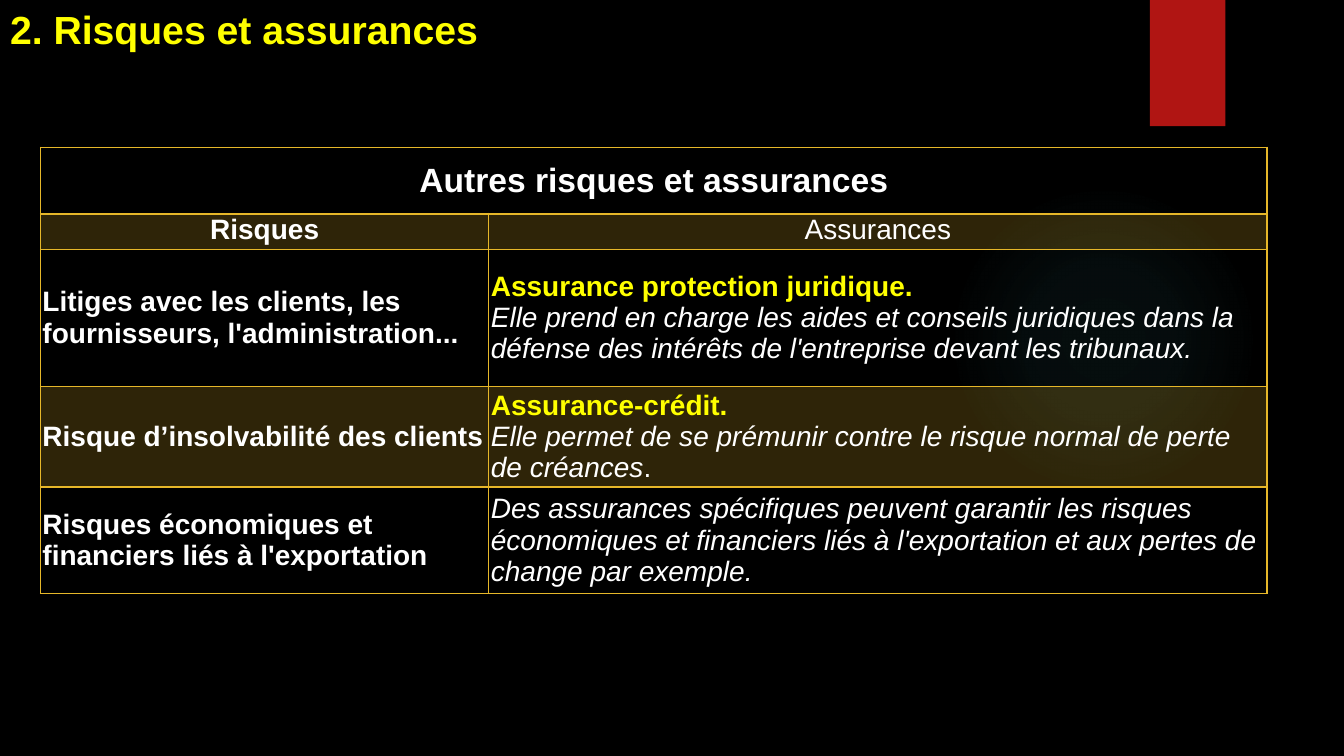
from lxml import etree
from pptx import Presentation
from pptx.dml.color import RGBColor
from pptx.enum.shapes import MSO_SHAPE
from pptx.enum.text import MSO_ANCHOR, PP_ALIGN
from pptx.oxml import parse_xml
from pptx.oxml.ns import nsdecls, qn
from pptx.util import Cm, Pt

OVAL, RECT = MSO_SHAPE.OVAL, MSO_SHAPE.RECTANGLE
TOP, MIDDLE = MSO_ANCHOR.TOP, MSO_ANCHOR.MIDDLE
LEFT, CENTER = PP_ALIGN.LEFT, PP_ALIGN.CENTER
HUES = {"black": "000000", "white": "FFFFFF", "yellow": "FFFF00",
        "gold": "E6B729", "red": "B01513", "teal": "50B9C1"}


def color(name):
    return RGBColor.from_string(HUES[name])


def style(run, size, hue="white", bold=False, slant=False):
    font = run.font
    font.name, font.size = "Arial", Pt(size)
    font.bold, font.italic = bold, slant
    font.color.rgb = color(hue)


deck = Presentation()
deck.slide_width, deck.slide_height = Cm(33.87), Cm(19.05)
slide = deck.slides.add_slide(deck.slide_layouts[5])
slide.background.fill.solid()
slide.background.fill.fore_color.rgb = color("black")

# Soft glow behind the table
glow = slide.shapes.add_shape(OVAL, Cm(23.9), Cm(4.65), Cm(7.82), Cm(7.82))
glow.shadow.inherit = False
glow.line.fill.background()
stops = "".join(
    f'<a:gs pos="{pos}000"><a:srgbClr val="{HUES["teal"]}">'
    f'<a:alpha val="{alpha}000"/></a:srgbClr></a:gs>'
    for pos, alpha in [(0, 7), (36, 6), (69, 0), (100, 0)])
fade = parse_xml(
    f'<a:gradFill {nsdecls("a")}><a:gsLst>{stops}</a:gsLst><a:path path="circle">'
    '<a:fillToRect l="50000" t="50000" r="50000" b="50000"/></a:path></a:gradFill>')
glow.element.spPr.find(qn("a:prstGeom")).addnext(fade)

# Red tab at the top
tab = slide.shapes.add_shape(RECT, Cm(28.98), 0, Cm(1.9), Cm(3.18))
tab.shadow.inherit = False
tab.fill.solid()
tab.fill.fore_color.rgb = color("red")
tab.line.fill.background()

# Title
title = slide.shapes.title
title.left, title.top, title.width, title.height = 0, 0, Cm(16.23), Cm(1.45)
frame = title.text_frame
frame.text = "2. Risques et assurances"
frame.vertical_anchor = TOP
frame.paragraphs[0].alignment = LEFT
style(frame.paragraphs[0].runs[0], 28, "yellow", True)

# Table content: cells hold paragraphs, paragraphs hold (text, look) runs
LOOKS = {"head": (24, "white", True), "bold": (20, "white", True),
         "plain": (20,), "key": (20, "yellow", True),
         "note": (20, "white", False, True)}
ROWS = [
    [[[("Autres risques et assurances", "head")]], []],
    [[[("Risques", "bold")]], [[("Assurances", "plain")]]],
    [[[("Litiges avec les clients, les fournisseurs, l'administration...", "bold")]],
     [[("Assurance protection juridique.", "key")],
      [("Elle prend en charge les aides et conseils juridiques dans la défense "
        "des intérêts de l'entreprise devant les tribunaux.", "note")]]],
    [[[("Risque d’insolvabilité des clients", "bold")]],
     [[("Assurance-crédit.", "key")],
      [("Elle permet de se prémunir contre le risque normal de perte de créances",
        "note"), (".", "plain")]]],
    [[[("Risques économiques et financiers liés à l'exportation", "bold")]],
     [[("Des assurances spécifiques peuvent garantir les risques économiques et "
        "financiers liés à l'exportation et aux pertes de change par exemple.",
        "note")]]],
]
WIDTHS = [11.3, 19.61]
HEIGHTS = [1.68, 0.89, 3.45, 2.54, 2.69]

# Table grid
table = slide.shapes.add_table(len(HEIGHTS), len(WIDTHS), Cm(1.02), Cm(3.71),
                               Cm(sum(WIDTHS)), Cm(sum(HEIGHTS))).table
table.first_row = table.horz_banding = False
for col, width in zip(table.columns, WIDTHS):
    col.width = Cm(width)
for row, height in zip(table.rows, HEIGHTS):
    row.height = Cm(height)
table.cell(0, 0).merge(table.cell(0, 1))

# Cells
for y, row in enumerate(ROWS):
    for x, paras in enumerate(row):
        cell = table.cell(y, x)
        cell.margin_left = cell.margin_right = Cm(0.05)
        cell.margin_top = cell.margin_bottom = 0
        cell.vertical_anchor = TOP if y == 1 else MIDDLE

        # Gold borders, thicker below the heading
        props = cell._tc.get_or_add_tcPr()
        for side in "LRTB":
            thick = (y, side) in [(0, "B"), (1, "T")]
            line = etree.SubElement(props, qn(f"a:ln{side}"),
                                    w=str(Pt(2 if thick else 1)))
            fill = etree.SubElement(line, qn("a:solidFill"))
            etree.SubElement(fill, qn("a:srgbClr"), val=HUES["gold"])

        # Translucent fill on every other row
        if y % 2:
            cell.fill.solid()
            cell.fill.fore_color.rgb = color("gold")
            shade = props.find(qn("a:solidFill"))[0]
            etree.SubElement(shade, qn("a:alpha"), val="20000")
        else:
            cell.fill.background()

        # Text
        for n, runs in enumerate(paras):
            frame = cell.text_frame
            para = frame.add_paragraph() if n else frame.paragraphs[0]
            para.alignment = CENTER if y < 2 else LEFT
            for text, look in runs:
                run = para.add_run()
                run.text = text
                style(run, *LOOKS[look])

deck.save("out.pptx")
